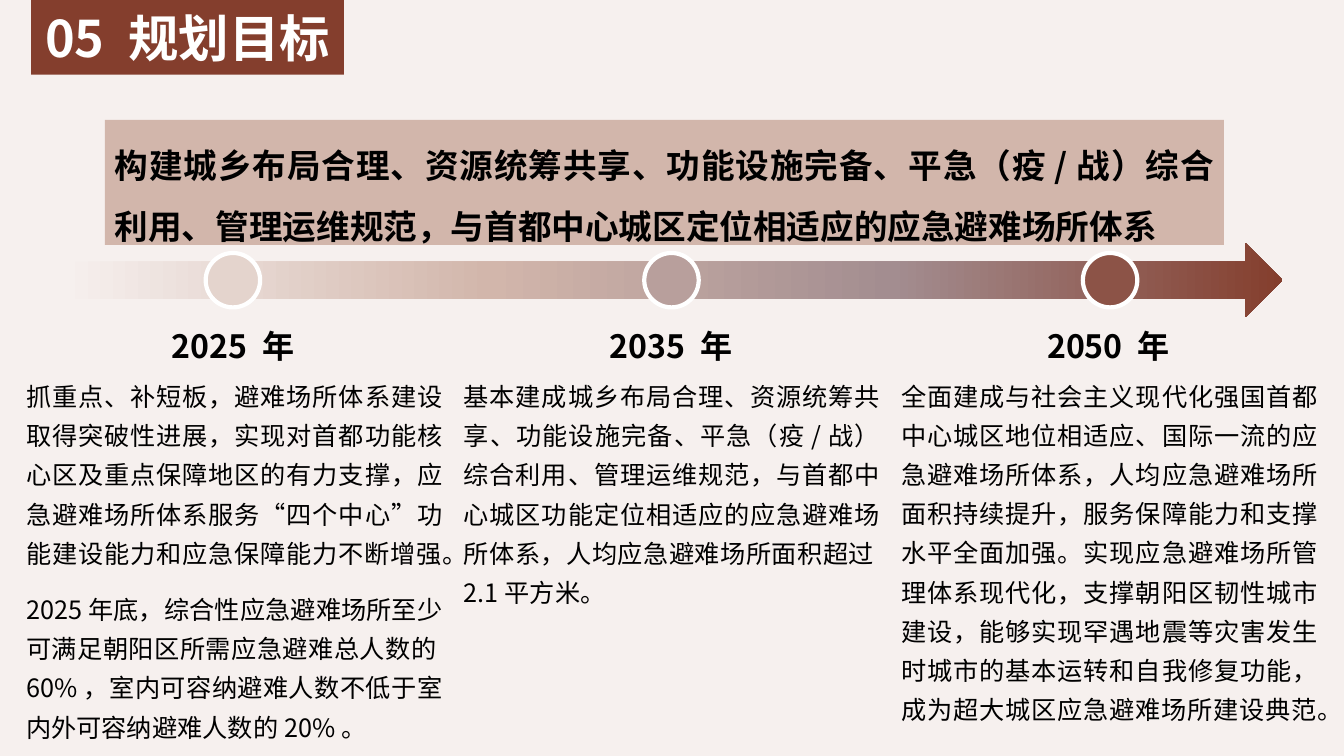
from lxml import etree
from pptx import Presentation
from pptx.dml.color import RGBColor
from pptx.enum.shapes import MSO_SHAPE
from pptx.enum.text import MSO_ANCHOR, MSO_AUTO_SIZE, PP_ALIGN
from pptx.oxml.ns import qn
from pptx.util import Inches, Pt

RECTANGLE, ARROW, CIRCLE = MSO_SHAPE.RECTANGLE, MSO_SHAPE.RIGHT_ARROW, MSO_SHAPE.OVAL
TOP, MIDDLE = MSO_ANCHOR.TOP, MSO_ANCHOR.MIDDLE
CENTER, JUSTIFY = PP_ALIGN.CENTER, PP_ALIGN.JUSTIFY
NO_FIT = MSO_AUTO_SIZE.NONE

FONT = "Noto Sans CJK SC"
COLORS = {
    "paper": "F6F0EE", "brick": "843E2D", "sand": "D2B6AB", "mauve": "A38D90",
    "white": "FFFFFF", "black": "000000",
    "pale": "E4D4CD", "rose": "B89F9C", "rust": "8C5347",
}
ARROW_STOPS = [(0, "paper"), (35, "sand"), (68, "mauve"), (100, "brick")]

HEADING = "05 规划目标"
GOAL = ("构建城乡布局合理、资源统筹共享、功能设施完备、平急（疫/战）综合利用、"
        "管理运维规范，与首都中心城区定位相适应的应急避难场所体系")

# Year, marker colour, line spacing, paragraphs
STAGES = [
    ("2025 年", "pale", 1.3, [
        "抓重点、补短板，避难场所体系建设取得突破性进展，实现对首都功能核心区及重点保障地区的"
        "有力支撑，应急避难场所体系服务“四个中心”功能建设能力和应急保障能力不断增强。",
        "2025年底，综合性应急避难场所至少可满足朝阳区所需应急避难总人数的60%，"
        "室内可容纳避难人数不低于室内外可容纳避难人数的20%。"]),
    ("2035 年", "rose", 1.3, [
        "基本建成城乡布局合理、资源统筹共享、功能设施完备、平急（疫/战）综合利用、管理运维规范，"
        "与首都中心城区功能定位相适应的应急避难场所体系，人均应急避难场所面积超过2.1平方米。"]),
    ("2050 年", "rust", Pt(28), [
        "全面建成与社会主义现代化强国首都中心城区地位相适应、国际一流的应急避难场所体系，"
        "人均应急避难场所面积持续提升，服务保障能力和支撑水平全面加强。"
        "实现应急避难场所管理体系现代化，支撑朝阳区韧性城市建设，"
        "能够实现罕遇地震等灾害发生时城市的基本运转和自我修复功能，"
        "成为超大城区应急避难场所建设典范。"]),
]


class SlideBuilder:
    def __init__(self, deck):
        self.page = deck.slides.add_slide(deck.slide_layouts[5])
        self.paint(self.page.background.fill, "paper")

    def paint(self, fill, color):
        fill.solid()
        fill.fore_color.rgb = RGBColor.from_string(COLORS[color])

    def fill_text(self, box, texts, size, color="black", bold=False, align=JUSTIFY,
                  spacing=1.0, gap=0, anchor=TOP, inset=None):
        frame = box.text_frame
        settings = {"word_wrap": True, "auto_size": NO_FIT, "vertical_anchor": anchor}
        if inset is not None:
            for side in ("left", "top", "right", "bottom"):
                settings[f"margin_{side}"] = Inches(inset)
        for name, value in settings.items():
            setattr(frame, name, value)
        for index, text in enumerate(texts):
            para = frame.paragraphs[0] if index == 0 else frame.add_paragraph()
            layout = {"alignment": align, "line_spacing": spacing,
                      "space_before": Pt(gap if index else 0)}
            for name, value in layout.items():
                setattr(para, name, value)
            span = para.add_run()
            span.text = text
            for name, value in {"size": Pt(size), "bold": bold, "name": FONT}.items():
                setattr(span.font, name, value)
            span.font.color.rgb = RGBColor.from_string(COLORS[color])
            # East Asian typeface
            etree.SubElement(span.font._element, qn("a:ea"), typeface=FONT)

    def title(self, text, *area):
        box = self.page.shapes.title
        for name, value in zip(("left", "top", "width", "height"), area):
            setattr(box, name, Inches(value))
        self.paint(box.fill, "brick")
        self.fill_text(box, [text], 36, "white", True, CENTER, anchor=MIDDLE)

    def shape(self, kind, color, *area, outline=None):
        shape = self.page.shapes.add_shape(kind, *map(Inches, area))
        shape.shadow.inherit = False
        self.paint(shape.fill, color)
        if outline:
            self.paint(shape.line.fill, outline)
            shape.line.width = Pt(3)
        else:
            shape.line.fill.background()
        return shape

    def gradient(self, shape, stops):
        shape.fill.gradient()
        shape.fill.gradient_angle = 0
        stop_list = shape._element.spPr.find(".//" + qn("a:gsLst"))
        for stop in list(stop_list):
            stop_list.remove(stop)
        for percent, color in stops:
            stop = etree.SubElement(stop_list, qn("a:gs"), pos=str(percent * 1000))
            etree.SubElement(stop, qn("a:srgbClr"), val=COLORS[color])

    def text(self, texts, *area, **style):
        box = self.page.shapes.add_textbox(*map(Inches, area))
        self.fill_text(box, texts, inset=0, **style)


def main():
    deck = Presentation()
    deck.slide_width, deck.slide_height = Inches(13.33), Inches(7.5)
    slide = SlideBuilder(deck)

    # Heading and overall goal
    slide.title(HEADING, 0.31, 0, 3.1, 0.74)
    banner = slide.shape(RECTANGLE, "sand", 1.04, 1.19, 11.1, 1.24)
    slide.fill_text(banner, [GOAL], 24, bold=True, spacing=1.5)

    # Timeline arrow
    arrow = slide.shape(ARROW, "sand", 0.62, 2.41, 12.1, 0.74)
    slide.gradient(arrow, ARROW_STOPS)

    # Stages: marker, year and description
    for index, (year, marker, spacing, texts) in enumerate(STAGES):
        left = 0.26 + 4.34 * index
        slide.shape(CIRCLE, marker, 2.04 + 4.35 * index, 2.51, 0.54, 0.54,
                    outline="white")
        slide.text([year], left + 0.77, 3.24, 2.57, 0.38,
                   size=22.9, bold=True, align=CENTER)
        slide.text(texts, left, 3.69, 4.13, 3.67, size=18, spacing=spacing, gap=12)

    deck.save("out.pptx")


if __name__ == "__main__":
    main()
